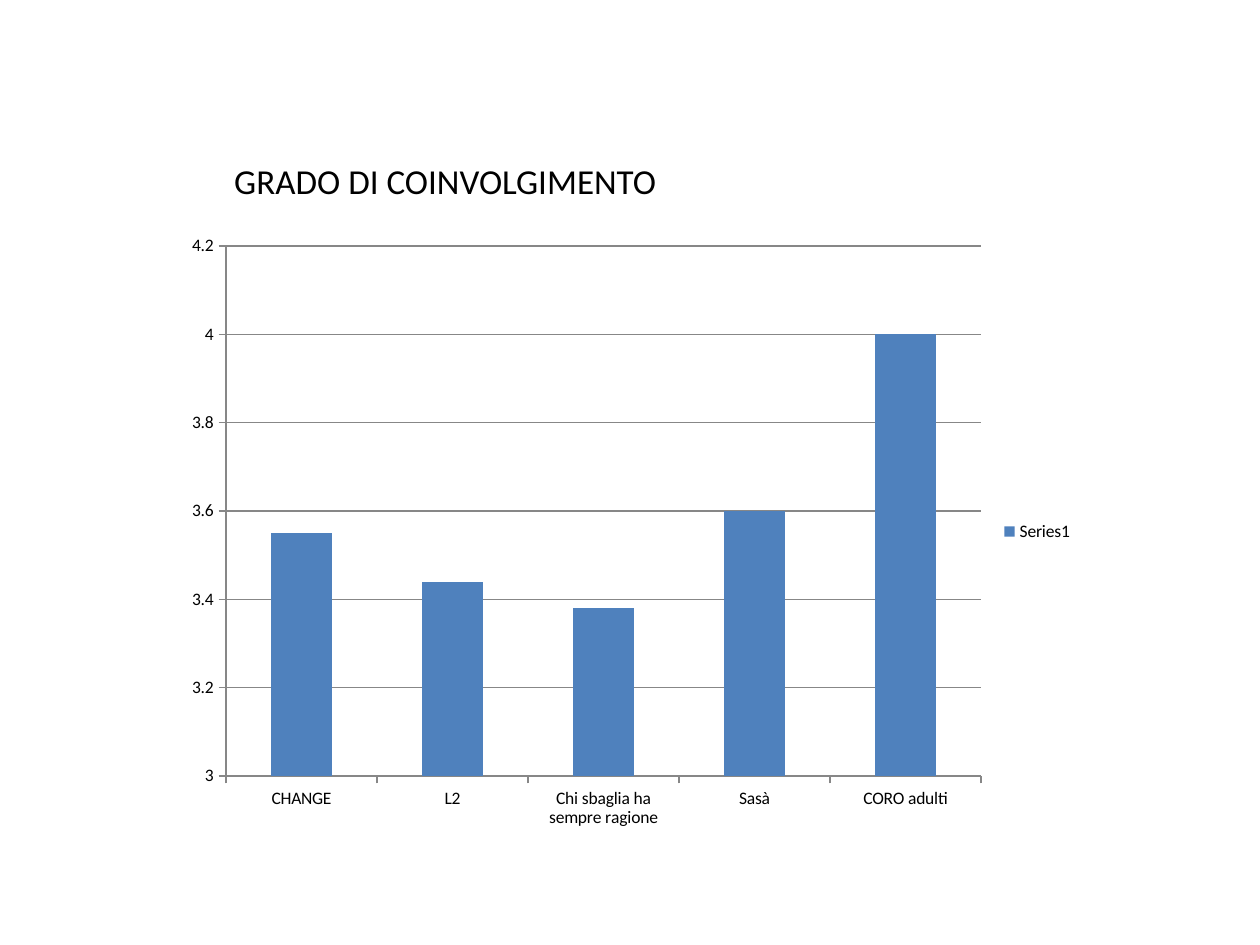
from dataclasses import dataclass

from lxml import etree
from pptx import Presentation
from pptx import util as u
from pptx.chart.data import CategoryChartData
from pptx.dml.color import RGBColor
from pptx.enum import chart as ch
from pptx.enum import text
from pptx.oxml.ns import qn

PX = u.Inches(1) / 126


@dataclass(frozen=True)
class Theme:
    font: str = "Calibri"
    ink: RGBColor = RGBColor(0, 0, 0)
    bar: RGBColor = RGBColor(0x4F, 0x81, 0xBD)
    rule: RGBColor = RGBColor(0x87, 0x87, 0x87)
    title_size: int = u.Pt(20)
    chart_size: int = u.Pt(10)


THEME = Theme()
INVOLVEMENT = {
    "CHANGE": 3.55,
    "L2": 3.44,
    "Chi sbaglia ha sempre ragione": 3.38,
    "Sasà": 3.6,
    "CORO adulti": 4,
}


def px(*lengths):
    return [round(length * PX) for length in lengths]


def set_format(target, **values):
    for name, value in values.items():
        setattr(target, name, value)


def format_font(font, size):
    set_format(font, name=THEME.font, size=size, bold=False)
    font.color.rgb = THEME.ink


def format_line(line):
    line.width = u.Pt(0.75)
    line.color.rgb = THEME.rule


def add_heading(slide, box):
    table = slide.shapes.add_table(1, 1, *px(*box)).table
    set_format(table, first_row=False, horz_banding=False)
    cell = table.cell(0, 0)
    cell.fill.background()
    inset = u.Inches(0.01)
    set_format(cell, vertical_anchor=text.MSO_ANCHOR.BOTTOM, margin_left=inset,
               margin_right=inset, margin_top=inset, margin_bottom=0)
    run = cell.text_frame.paragraphs[0].add_run()
    run.text = "GRADO DI COINVOLGIMENTO"
    format_font(run.font, THEME.title_size)


def place_plot(chart, chart_box, plot_box):
    """Fix the inner plot area; plot_box is relative to the chart, in px."""
    plot_area = chart.plots[0]._element.getparent()
    for old in plot_area.findall(qn("c:layout")):
        plot_area.remove(old)
    layout = etree.Element(qn("c:layout"))
    plot_area.insert(0, layout)
    manual = etree.SubElement(layout, qn("c:manualLayout"))
    settings = {"layoutTarget": "inner", "xMode": "edge", "yMode": "edge"}
    for name, part, whole in zip("xywh", plot_box, chart_box[2:] * 2):
        settings[name] = f"{part / whole:.4f}"
    for name, value in settings.items():
        etree.SubElement(manual, qn(f"c:{name}")).set("val", value)


def add_involvement_chart(slide, box):
    data = CategoryChartData()
    data.categories = list(INVOLVEMENT)
    data.add_series("Series1", list(INVOLVEMENT.values()))
    chart = slide.shapes.add_chart(
        ch.XL_CHART_TYPE.COLUMN_CLUSTERED, *px(*box), data).chart
    set_format(chart, has_title=False, has_legend=True)
    set_format(chart.legend, position=ch.XL_LEGEND_POSITION.RIGHT,
               include_in_layout=False)
    format_font(chart.font, THEME.chart_size)

    plot = chart.plots[0]
    set_format(plot, gap_width=150, vary_by_categories=False)
    fill = plot.series[0].format.fill
    fill.solid()
    fill.fore_color.rgb = THEME.bar

    for axis in (chart.category_axis, chart.value_axis):
        axis.major_tick_mark = ch.XL_TICK_MARK.OUTSIDE
        format_line(axis.format.line)
    set_format(chart.value_axis, minimum_scale=3, maximum_scale=4.2,
               major_unit=0.2, has_major_gridlines=True)
    format_line(chart.value_axis.major_gridlines.format.line)
    place_plot(chart, box, (52, 22, 755, 530))


def main():
    presentation = Presentation()
    set_format(presentation, slide_width=u.Inches(10), slide_height=u.Inches(7.5))
    slide = presentation.slides.add_slide(presentation.slide_layouts[6])
    add_involvement_chart(slide, (174, 224, 912, 615))
    add_heading(slide, (233, 86, 745, 118))
    presentation.save("out.pptx")


if __name__ == "__main__":
    main()
